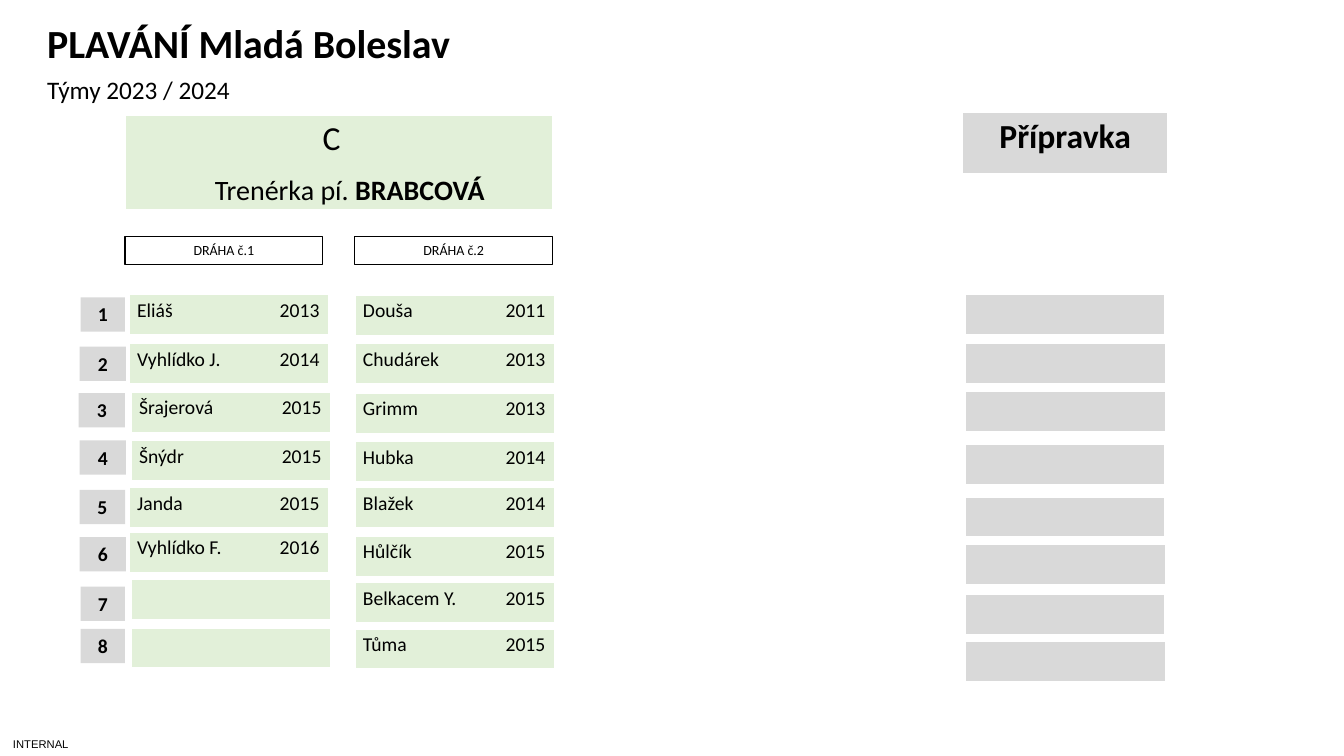
from pptx import Presentation
from pptx.dml.color import RGBColor
from pptx.enum.shapes import MSO_SHAPE as Shape
from pptx.enum.text import MSO_ANCHOR as Anchor, PP_ALIGN as Align
from pptx.oxml import parse_xml
from pptx.oxml.ns import nsdecls
from pptx.util import Inches, Pt

# Content
TITLE = "PLAVÁNÍ Mladá Boleslav"
SUBTITLE = "Týmy 2023 / 2024"
CLASSIFICATION = "INTERNAL"
TEAM, COACH_ROLE, COACH = "C", "Trenérka pí. ", "BRABCOVÁ"
BEGINNERS = "Přípravka"
LANES = [("DRÁHA č.1", 1.24), ("DRÁHA č.2", 3.52)]

# Swimmers: name, year of birth, left, top
SWIMMERS = [
    ("Eliáš", "2013", 1.28, 2.92), ("Vyhlídko J.", "2014", 1.28, 3.41),
    ("Šrajerová", "2015", 1.3, 3.89), ("Šnýdr", "2015", 1.3, 4.37),
    ("Janda", "2015", 1.28, 4.84), ("Vyhlídko F.", "2016", 1.28, 5.28),
    ("", "", 1.3, 5.75), ("", "", 1.3, 6.23),
    ("Douša", "2011", 3.52, 2.93), ("Chudárek", "2013", 3.52, 3.41),
    ("Grimm", "2013", 3.52, 3.9), ("Hubka", "2014", 3.52, 4.38),
    ("Blažek", "2014", 3.52, 4.84), ("Hůlčík", "2015", 3.52, 5.32),
    ("Belkacem Y.", "2015", 3.52, 5.78), ("Tůma", "2015", 3.52, 6.24),
]
# Free places for beginners: left, top
FREE_PLACES = [(9.57, 2.92), (9.58, 3.41), (9.58, 3.88), (9.57, 4.41),
               (9.57, 4.93), (9.58, 5.4), (9.57, 5.9), (9.58, 6.36)]
# Row numbers: left, top, width
ROW_NUMBERS = [(0.8, 2.95, 0.44), (0.79, 3.44, 0.46), (0.78, 3.9, 0.46), (0.79, 4.37, 0.46),
               (0.79, 4.86, 0.45), (0.79, 5.33, 0.46), (0.8, 5.82, 0.44), (0.8, 6.24, 0.44)]

THEME = {
    "font": "Calibri", "footer_font": "Arial",
    "text": RGBColor(0, 0, 0), "team": RGBColor(0xE2, 0xF0, 0xD9),
    "grey": RGBColor(0xD9, 0xD9, 0xD9), "border": "FFFFFF",
    "title": 28.5, "heading": 24, "coach": 20, "subtitle": 18,
    "body": 14, "lane": 10, "footer": 8,
}
CARD_SIZE = (1.98, 0.41)
YEAR_TAB = 1.81
BORDERS = {"lnL": 1, "lnR": 1, "lnT": 1, "lnB": 3}

prs = Presentation()
prs.slide_width, prs.slide_height = Inches(13.33), Inches(7.5)
slide = prs.slides.add_slide(prs.slide_layouts[6])


def apply(target, **values):
    for key, value in values.items():
        setattr(target, key, value)


def write(paragraph, text, size, bold=False, font="font"):
    run = paragraph.add_run()
    run.text = text
    apply(run.font, name=THEME[font], size=Pt(THEME[size]), bold=bold)
    run.font.color.rgb = THEME["text"]


def add_text(box, text, size, anchor, bold=False, font="font", **paragraph_format):
    frame = slide.shapes.add_textbox(*map(Inches, box)).text_frame
    apply(frame, word_wrap=True, vertical_anchor=anchor)
    apply(frame.paragraphs[0], **paragraph_format)
    write(frame.paragraphs[0], text, size, bold, font)
    return frame


def add_box(box, text, size, bold=False, fill=None):
    shape = slide.shapes.add_shape(Shape.RECTANGLE, *map(Inches, box))
    shape.shadow.inherit = False
    if fill:
        shape.fill.solid()
        shape.fill.fore_color.rgb = THEME[fill]
        shape.line.fill.background()
    else:
        shape.fill.background()
        shape.line.color.rgb = THEME["text"]
        shape.line.width = Pt(0.75)
    frame = shape.text_frame
    apply(frame, word_wrap=True, vertical_anchor=Anchor.TOP)
    frame.paragraphs[0].alignment = Align.CENTER
    write(frame.paragraphs[0], text, size, bold)


def add_card(left, top, size, fill):
    """Add a one-cell table and return the cell's text frame."""
    table = slide.shapes.add_table(1, 1, *map(Inches, (left, top, *size))).table
    apply(table, first_row=False, horz_banding=False)
    cell = table.cell(0, 0)
    apply(cell, margin_left=Inches(0.08), margin_right=Inches(0.08),
          margin_top=Inches(0.04), margin_bottom=0)
    for side, width in BORDERS.items():
        cell._tc.get_or_add_tcPr().append(parse_xml(
            f'<a:{side} {nsdecls("a")} w="{Pt(width)}"><a:solidFill>'
            f'<a:srgbClr val="{THEME["border"]}"/></a:solidFill></a:{side}>'))
    cell.fill.solid()
    cell.fill.fore_color.rgb = THEME[fill]
    return cell.text_frame


def indent(paragraph, inches):
    paragraph._p.get_or_add_pPr().set("marL", str(Inches(inches)))


# Title, subtitle and footer
add_text((0.37, 0.23, 10.94, 0.47), TITLE, "title", Anchor.BOTTOM, bold=True, line_spacing=0.7)
add_text((0.37, 0.69, 10.94, 0.39), SUBTITLE, "subtitle", Anchor.MIDDLE)
footer = add_text((0, 7.26, 0.81, 0.24), CLASSIFICATION, "footer", Anchor.MIDDLE,
                  font="footer_font", alignment=Align.CENTER)
apply(footer, margin_left=0, margin_right=0, margin_top=0, margin_bottom=0)

# Team and beginners headings
team = add_card(1.24, 1.14, (4.24, 0.95), "team")
indent(team.paragraphs[0], 1.88)
write(team.paragraphs[0], TEAM, "heading")
coach = team.add_paragraph()
indent(coach, 0.81)
coach.space_before = Pt(9.8)
write(coach, COACH_ROLE, "coach")
write(coach, COACH, "coach", bold=True)

beginners = add_card(9.55, 1.12, (2.03, 0.61), "grey").paragraphs[0]
beginners.alignment = Align.CENTER
write(beginners, BEGINNERS, "heading", bold=True)

# Lane labels and row numbers
for lane, left in LANES:
    add_box((left, 2.35, 1.96, 0.27), lane, "lane")
for number, (left, top, width) in enumerate(ROW_NUMBERS, 1):
    add_box((left, top, width, 0.34), str(number), "body", bold=True, fill="grey")

# Swimmers, with years lined up on a right tab
for name, year, left, top in SWIMMERS:
    swimmer = add_card(left, top, CARD_SIZE, "team").paragraphs[0]
    if name:
        swimmer._p.get_or_add_pPr().append(parse_xml(
            f'<a:tabLst {nsdecls("a")}><a:tab pos="{Inches(YEAR_TAB)}" algn="r"/></a:tabLst>'))
        write(swimmer, f"{name}\t{year}", "body")

# Free places for beginners
for left, top in FREE_PLACES:
    add_card(left, top, CARD_SIZE, "grey")

prs.save("out.pptx")
